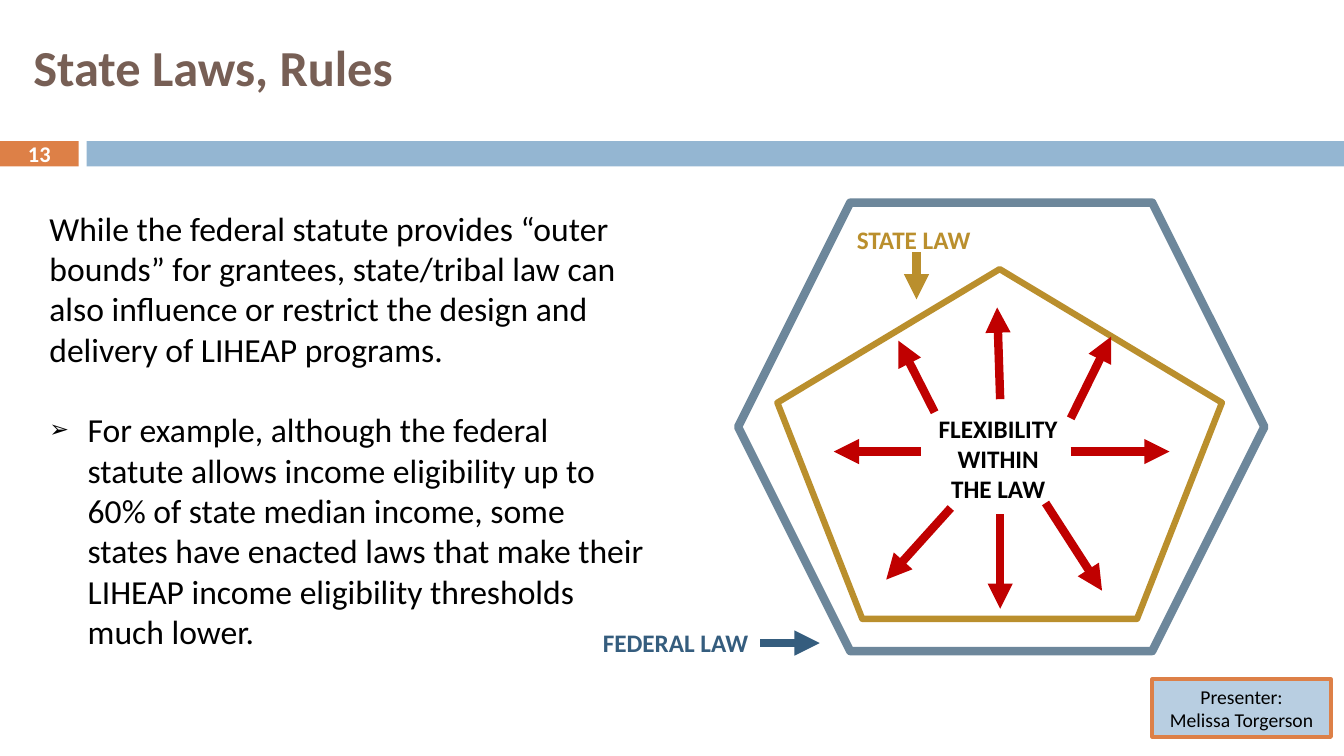
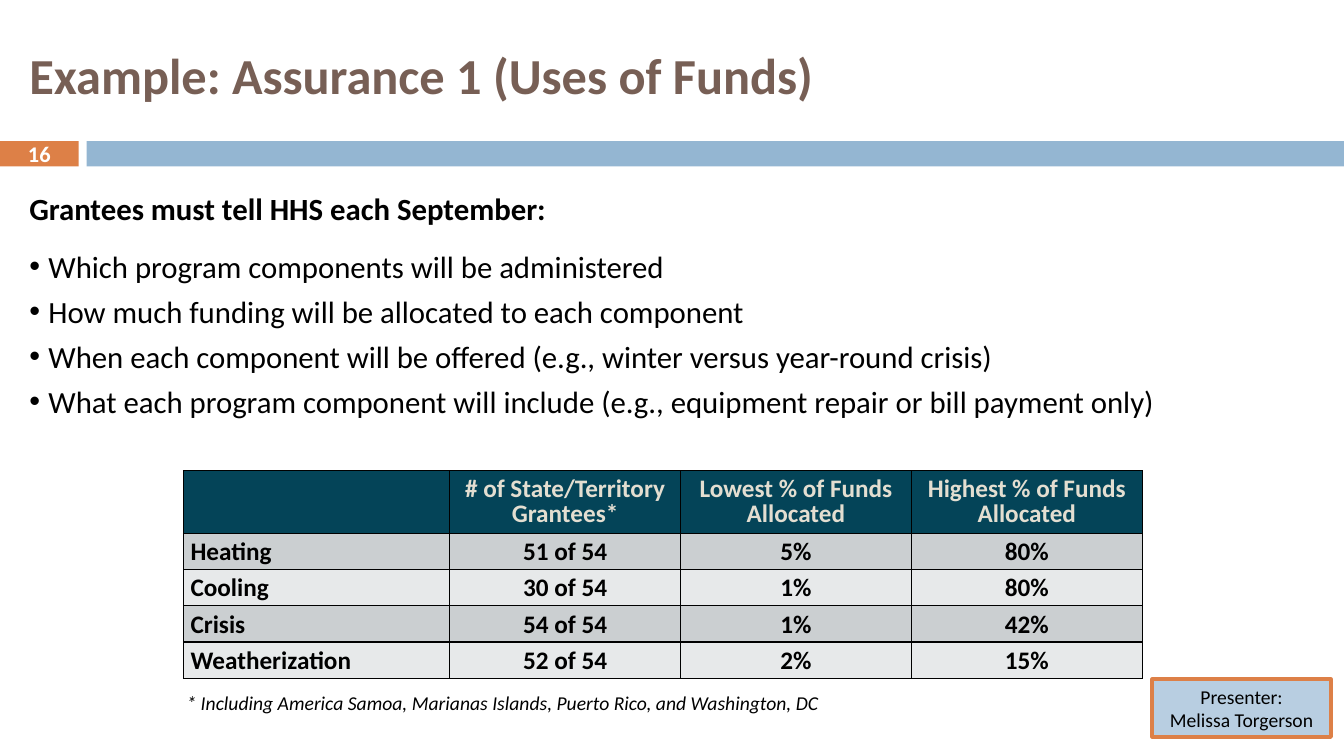
from lxml import etree
from pptx import Presentation
from pptx.dml.color import RGBColor
from pptx.enum.shapes import MSO_CONNECTOR, MSO_SHAPE
from pptx.enum.text import MSO_ANCHOR, MSO_AUTO_SIZE, PP_ALIGN
from pptx.oxml.ns import qn
from pptx.util import Inches, Pt

FONT = "Calibri"
COLORS = {
    "title": "775F55", "orange": "DD8047", "band": "94B6D2",
    "text": "000000", "white": "FFFFFF",
    "federal": "355D7E", "hexagon": "6D879B", "state": "BA8F2D", "arrow": "C00000",
    "header": "044458", "header_text": "E3DED1", "odd": "CBCFD1", "even": "E7E9EA",
}
CENTER, LEFT = PP_ALIGN.CENTER, PP_ALIGN.LEFT

# Arrow starts and ends, in inches from the corner of the diagram
FLEXIBILITY_ARROWS = [
    ((1.95, 2.08), (1.59, 1.37)), ((3.3, 2.47), (4.28, 2.47)),
    ((1.81, 2.47), (0.95, 2.47)), ((2.6, 1.95), (2.57, 1.04)),
    ((2.11, 3.03), (1.47, 3.74)), ((3.3, 2.14), (3.7, 1.33)),
    ((2.6, 3.09), (2.6, 4.03)), ((3.05, 2.98), (3.61, 3.85)),
]
FUNDS = [
    ("", "# of State/Territory Grantees*", "Lowest % of Funds Allocated",
     "Highest % of Funds Allocated"),
    ("Heating", "51 of 54", "5%", "80%"),
    ("Cooling", "30 of 54", "1%", "80%"),
    ("Crisis", "54 of 54", "1%", "42%"),
    ("Weatherization", "52 of 54", "2%", "15%"),
]
FUNDS_NOTE = "* Including America Samoa, Marianas Islands, Puerto Rico, and Washington, DC"


def rgb(name):
    return RGBColor.from_string(COLORS[name])


def sub(parent, tag, **attrs):
    el = etree.SubElement(parent, qn(tag))
    for key, value in attrs.items():
        el.set(key, str(value))
    return el


def write(p, text, size, color="text", align=LEFT, spacing=None, before=0, **font):
    for key, value in {"alignment": align, "line_spacing": spacing,
                       "space_before": Pt(before)}.items():
        setattr(p, key, value)
    r = p.add_run()
    r.text = text
    for key, value in {"name": FONT, "size": Pt(size), **font}.items():
        setattr(r.font, key, value)
    r.font.color.rgb = rgb(color)


def set_bullet(p, char=None, indent=0, hanging=True, percent=100):
    """Set the indent, and a bullet or none, in place of the template's."""
    pPr = p._p.get_or_add_pPr()
    pPr.set("marL", str(Inches(indent)))
    pPr.set("indent", str(-Inches(indent) if hanging else 0))
    if char:
        sub(pPr, "a:buSzPct", val=percent * 1000)
        sub(pPr, "a:buFont", typeface="Arial")
        sub(pPr, "a:buChar", char=char)
    else:
        sub(pPr, "a:buNone")


def place(sp, box):
    sp.left, sp.top, sp.width, sp.height = map(Inches, box)


def add_shape(slide, kind, box, fill=None, line=None, width=1):
    sp = slide.shapes.add_shape(kind, *map(Inches, box))
    sp.shadow.inherit = False
    if fill:
        sp.fill.solid()
        sp.fill.fore_color.rgb = rgb(fill)
    else:
        sp.fill.background()
    if line:
        sp.line.color.rgb = rgb(line)
        sp.line.width = Pt(width)
    else:
        sp.line.fill.background()
    return sp


def add_label(slide, box, text, size=18, color="text", align=LEFT, anchor=MSO_ANCHOR.TOP):
    tf = slide.shapes.add_textbox(*map(Inches, box)).text_frame
    tf.word_wrap = True
    tf.vertical_anchor = anchor
    lines = text.split("\n")
    for i, line in enumerate(lines):
        p = tf.paragraphs[0] if i == 0 else tf.add_paragraph()
        write(p, line, size, color, align, bold=True)


def add_arrow(slide, start, end, color):
    line = slide.shapes.add_connector(MSO_CONNECTOR.STRAIGHT, *map(Inches, start + end))
    line.line.color.rgb = rgb(color)
    line.line.width = Pt(6)
    sub(line.line._get_or_add_ln(), "a:tailEnd", type="triangle")
    sub(line._element.spPr, "a:effectLst")


def add_presenter(slide, box):
    sp = add_shape(slide, MSO_SHAPE.RECTANGLE, box, "band", "orange", 3)
    color = sp._element.spPr.find(qn("a:solidFill")).find(qn("a:srgbClr"))
    sub(color, "a:alpha", val=66000)
    tf = sp.text_frame
    tf.word_wrap = True
    write(tf.paragraphs[0], "Presenter:", 14, align=CENTER)
    write(tf.add_paragraph(), "Melissa Torgerson", 14, align=CENTER)


def add_base_slide(prs, title, number, title_box, indent=0, spacing=None):
    """Add a slide with title, bands, number and presenter; return it and its body."""
    slide = prs.slides.add_slide(prs.slide_layouts[1])
    add_shape(slide, MSO_SHAPE.RECTANGLE, (0, 1.4, 0.78, 0.25), "orange")
    add_shape(slide, MSO_SHAPE.RECTANGLE, (0.86, 1.4, 12.47, 0.25), "band")
    add_label(slide, (0, 1.39, 0.78, 0.27), str(number), 16, "white", CENTER,
              MSO_ANCHOR.MIDDLE)
    add_presenter(slide, (11.43, 6.74, 1.77, 0.57))

    place(slide.shapes.title, title_box)
    tf = slide.shapes.title.text_frame
    tf.auto_size = MSO_AUTO_SIZE.NONE
    tf.vertical_anchor = MSO_ANCHOR.MIDDLE
    write(tf.paragraphs[0], title, 36, "title", spacing=spacing, bold=True)
    set_bullet(tf.paragraphs[0], indent=indent, hanging=False)
    return slide, slide.placeholders[1]


def fill_body(body, box, intro, items, char, indent, percent=100, first_gap=0, gap=0,
              bold_intro=False, **style):
    """Write an intro paragraph and its bulleted items in the body placeholder."""
    place(body, box)
    tf = body.text_frame
    tf.auto_size = MSO_AUTO_SIZE.NONE
    write(tf.paragraphs[0], intro, bold=bold_intro, **style)
    set_bullet(tf.paragraphs[0])
    for i, item in enumerate(items):
        p = tf.add_paragraph()
        write(p, item, before=gap if i else first_gap, **style)
        set_bullet(p, char, indent, percent=percent)


def add_law_diagram(slide, left, top):
    def at(x, y, *size):
        return (left + x, top + y, *size)

    add_shape(slide, MSO_SHAPE.HEXAGON, at(0, 0, 5.22, 4.45), line="hexagon", width=6)
    add_shape(slide, MSO_SHAPE.REGULAR_PENTAGON, at(0.39, 0.66, 4.41, 3.47),
              line="state", width=4.5)
    add_label(slide, at(-1.44, 4.16, 2.05, 0.4), "FEDERAL LAW", color="federal")
    add_label(slide, at(1.08, 0.17, 1.73, 0.4), "STATE LAW", color="state")
    add_label(slide, at(1.88, 2.04, 1.4, 1.01), "FLEXIBILITY\nWITHIN\nTHE LAW",
              align=CENTER)
    add_arrow(slide, at(0.22, 4.37), at(0.81, 4.37), "federal")
    add_arrow(slide, at(1.77, 0.49), at(1.77, 0.96), "state")
    for start, end in FLEXIBILITY_ARROWS:
        add_arrow(slide, at(*start), at(*end), "arrow")


def format_cell(cell, fill=None, sides="LRTB", left=0.01):
    """Set the margins, the fill and a black border on the sides named."""
    for key, value in {"margin_left": left, "margin_right": 0.01,
                       "margin_top": 0.01, "margin_bottom": 0}.items():
        setattr(cell, key, Inches(value))
    cell.vertical_anchor = MSO_ANCHOR.MIDDLE
    tcPr = cell._tc.get_or_add_tcPr()
    for side in "LRTB":
        ln = sub(tcPr, f"a:ln{side}", w=Pt(1))
        if side in sides:
            sub(sub(ln, "a:solidFill"), "a:srgbClr", val=COLORS["text"])
        else:
            sub(ln, "a:noFill")
    if fill:
        cell.fill.solid()
        cell.fill.fore_color.rgb = rgb(fill)
    else:
        cell.fill.background()


def add_funds_table(slide, left, top):
    widths = [2.64] + [2.29] * 3
    heights = [0.62] + [0.36] * 4 + [0.5]
    frame = slide.shapes.add_table(len(heights), len(widths), *map(
        Inches, (left, top, sum(widths), sum(heights))))
    table = frame.table
    table.first_row = table.horz_banding = False
    for column, width in zip(table.columns, widths):
        column.width = Inches(width)
    for row, height in zip(table.rows, heights):
        row.height = Inches(height)

    for i, values in enumerate(FUNDS):
        fill = "header" if i == 0 else "odd" if i % 2 else "even"
        for j, value in enumerate(values):
            cell = table.cell(i, j)
            format_cell(cell, fill, left=0.01 if j else 0.07)
            if value:
                write(cell.text_frame.paragraphs[0], value, 18,
                      "text" if i else "header_text", CENTER if j else LEFT,
                      None if i else 0.8, bold=True)

    note_row = len(FUNDS)
    for j in range(len(widths)):
        format_cell(table.cell(note_row, j), sides="T", left=0.03)
    note = table.cell(note_row, 0)
    note.merge(table.cell(note_row, len(widths) - 1))
    write(note.text_frame.paragraphs[0], FUNDS_NOTE, 14, italic=True)


def add_state_laws(prs):
    slide, body = add_base_slide(prs, "State Laws, Rules", 13, (0.11, 0.17, 13.1, 1.08),
                                 indent=0.12, spacing=0.8)
    fill_body(
        body, (0.39, 2.01, 6.1, 5.02),
        "While the federal statute provides “outer bounds” for grantees, state/tribal law "
        "can also influence or restrict the design and delivery of LIHEAP programs.",
        ["For example, although the federal statute allows income eligibility up to 60% of "
         "state median income, some states have enacted laws that make their LIHEAP income "
         "eligibility thresholds much lower."],
        "➢", 0.38, percent=70, first_gap=28.8, size=24, spacing=Pt(28.8))
    add_law_diagram(slide, 7.32, 2.01)


def add_uses_of_funds(prs):
    slide, body = add_base_slide(prs, "Example: Assurance 1 (Uses of Funds)", 16,
                                 (0.19, 0.2, 11.89, 1.08))
    fill_body(
        body, (0.19, 1.9, 12.77, 2.7), "Grantees must tell HHS each September:",
        ["Which program components will be administered",
         "How much funding will be allocated to each component",
         "When each component will be offered (e.g., winter versus year-round crisis)",
         "What each program component will include (e.g., equipment repair or bill "
         "payment only)"],
        "•", 0.19, first_gap=20.5, gap=11, bold_intro=True, size=22, spacing=0.8)
    add_funds_table(slide, 1.82, 4.67)


def main():
    prs = Presentation()
    prs.slide_width, prs.slide_height = Inches(13.33), Inches(7.5)
    add_state_laws(prs)
    add_uses_of_funds(prs)
    prs.save("out.pptx")


if __name__ == "__main__":
    main()
